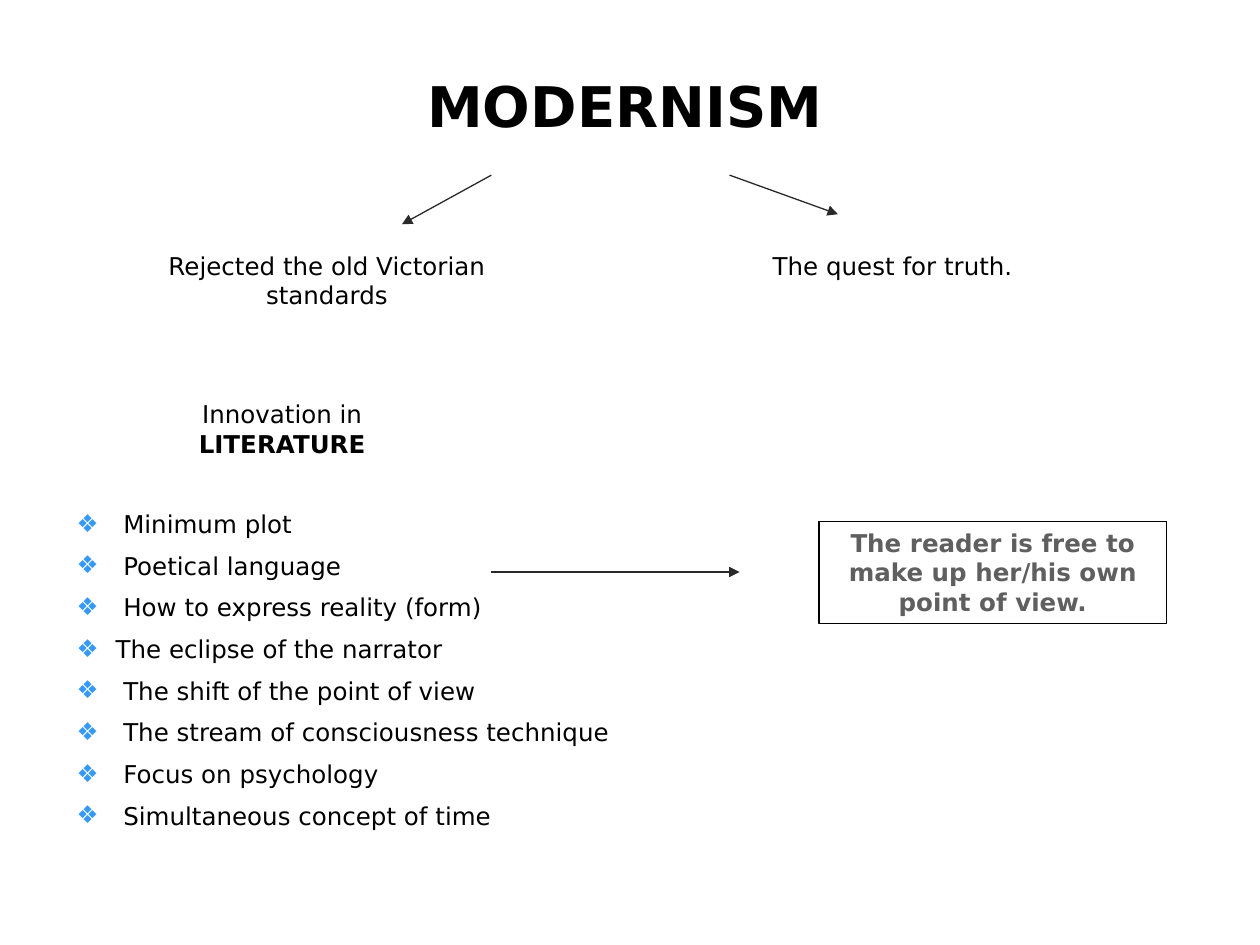
from dataclasses import dataclass

from lxml.etree import SubElement
from pptx import Presentation
from pptx.dml.color import RGBColor
from pptx.enum.shapes import MSO_CONNECTOR, MSO_SHAPE
from pptx.enum.text import MSO_ANCHOR, PP_ALIGN
from pptx.oxml.ns import qn
from pptx.shapes.base import BaseShape
from pptx.slide import Slide
from pptx.text.text import TextFrame, _Paragraph
from pptx.util import Inches, Pt


@dataclass(frozen=True)
class Theme:
    font: str = "DejaVu Sans"
    ink: str = "000000"
    muted: str = "5F5F5F"
    arrow: str = "292929"
    bullet: str = "3399FF"
    title_size: float = 32
    body_size: float = 14
    gap: float = 7
    line_width: float = 0.75


@dataclass(frozen=True)
class Area:
    left: float
    top: float
    width: float
    height: float


@dataclass(frozen=True)
class Caption:
    area: Area
    text: str
    strong: str = ""


@dataclass(frozen=True)
class Arrow:
    start: tuple[float, float]
    end: tuple[float, float]


@dataclass(frozen=True)
class Feature:
    text: str
    indent: float = 0.37


THEME = Theme()

CAPTIONS = [
    Caption(Area(5.55, 1.94, 3.07, 0.33), "The quest for truth."),
    Caption(Area(0.98, 1.94, 3.23, 0.57), "Rejected the old Victorian standards"),
    Caption(Area(1.06, 3.12, 2.36, 0.57), "Innovation in ", "LITERATURE"),
]

FEATURES = [
    Feature("Minimum plot"),
    Feature("Poetical language"),
    Feature("How to express reality (form)"),
    Feature("The eclipse of the narrator", indent=0.31),
    Feature("The shift of the point of view"),
    Feature("The stream of consciousness technique"),
    Feature("Focus on psychology"),
    Feature("Simultaneous concept of time"),
]

ARROWS = [
    Arrow((5.79, 1.39), (6.65, 1.7)),
    Arrow((3.9, 1.39), (3.19, 1.78)),
    Arrow((3.9, 4.54), (5.87, 4.54)),
]


def add_span(
    paragraph: _Paragraph,
    text: str,
    *,
    size: float = THEME.body_size,
    color: str = THEME.ink,
    bold: bool = False,
) -> None:
    span = paragraph.add_run()
    span.text = text
    span.font.name = THEME.font
    span.font.size = Pt(size)
    span.font.bold = bold
    span.font.color.rgb = RGBColor.from_string(color)


def place(shape: BaseShape, area: Area) -> None:
    shape.left, shape.top = Inches(area.left), Inches(area.top)
    shape.width, shape.height = Inches(area.width), Inches(area.height)


def add_frame(slide: Slide, area: Area) -> TextFrame:
    box = slide.shapes.add_textbox(0, 0, 0, 0)
    place(box, area)
    box.text_frame.word_wrap = True
    return box.text_frame


def add_title(slide: Slide, text: str, area: Area) -> None:
    title = slide.shapes.title
    place(title, area)
    title.text_frame.vertical_anchor = MSO_ANCHOR.MIDDLE
    paragraph = title.text_frame.paragraphs[0]
    paragraph.alignment = PP_ALIGN.CENTER
    add_span(paragraph, text, size=THEME.title_size, bold=True)


def add_caption(slide: Slide, caption: Caption) -> None:
    paragraph = add_frame(slide, caption.area).paragraphs[0]
    paragraph.alignment = PP_ALIGN.CENTER
    add_span(paragraph, caption.text)
    if caption.strong:
        add_span(paragraph, caption.strong, bold=True)


def add_bullet(paragraph: _Paragraph, indent: float) -> None:
    properties = paragraph._p.get_or_add_pPr()
    properties.set("marL", str(Inches(indent)))
    properties.set("indent", str(-Inches(indent)))
    color = SubElement(properties, qn("a:buClr"))
    SubElement(color, qn("a:srgbClr"), val=THEME.bullet)
    SubElement(properties, qn("a:buFont"), typeface=THEME.font)
    SubElement(properties, qn("a:buChar"), char="❖")


def add_features(slide: Slide, features: list[Feature], area: Area) -> None:
    frame = add_frame(slide, area)
    for index, feature in enumerate(features):
        paragraph = frame.add_paragraph() if index else frame.paragraphs[0]
        add_bullet(paragraph, feature.indent)
        if index:
            paragraph.space_before = Pt(THEME.gap)
        add_span(paragraph, feature.text)


def add_conclusion(slide: Slide, text: str, area: Area) -> None:
    box = slide.shapes.add_shape(MSO_SHAPE.RECTANGLE, 0, 0, 0, 0)
    place(box, area)
    box.shadow.inherit = False
    box.fill.background()
    box.line.color.rgb = RGBColor.from_string(THEME.ink)
    box.line.width = Pt(THEME.line_width)
    box.text_frame.word_wrap = True
    box.text_frame.vertical_anchor = MSO_ANCHOR.TOP
    paragraph = box.text_frame.paragraphs[0]
    paragraph.alignment = PP_ALIGN.CENTER
    add_span(paragraph, text, color=THEME.muted, bold=True)


def add_arrow(slide: Slide, arrow: Arrow) -> None:
    points = [Inches(value) for value in (*arrow.start, *arrow.end)]
    connector = slide.shapes.add_connector(MSO_CONNECTOR.STRAIGHT, *points)
    connector.line.color.rgb = RGBColor.from_string(THEME.arrow)
    connector.line.width = Pt(THEME.line_width)
    SubElement(connector.line._get_or_add_ln(), qn("a:tailEnd"), type="triangle")
    SubElement(connector._element.spPr, qn("a:effectLst"))


def main() -> None:
    deck = Presentation()
    deck.slide_width, deck.slide_height = Inches(10), Inches(7.5)
    page = deck.slides.add_slide(deck.slide_layouts.get_by_name("Title Only"))
    add_title(page, "MODERNISM", Area(-0.08, -0.27, 10.08, 2.21))
    for caption in CAPTIONS:
        add_caption(page, caption)
    add_features(page, FEATURES, Area(0.51, 3.99, 5.35, 3.16))
    add_conclusion(
        page,
        "The reader is free to make up her/his own point of view.",
        Area(6.5, 4.14, 2.76, 0.81),
    )
    for arrow in ARROWS:
        add_arrow(page, arrow)
    deck.save("out.pptx")


if __name__ == "__main__":
    main()
